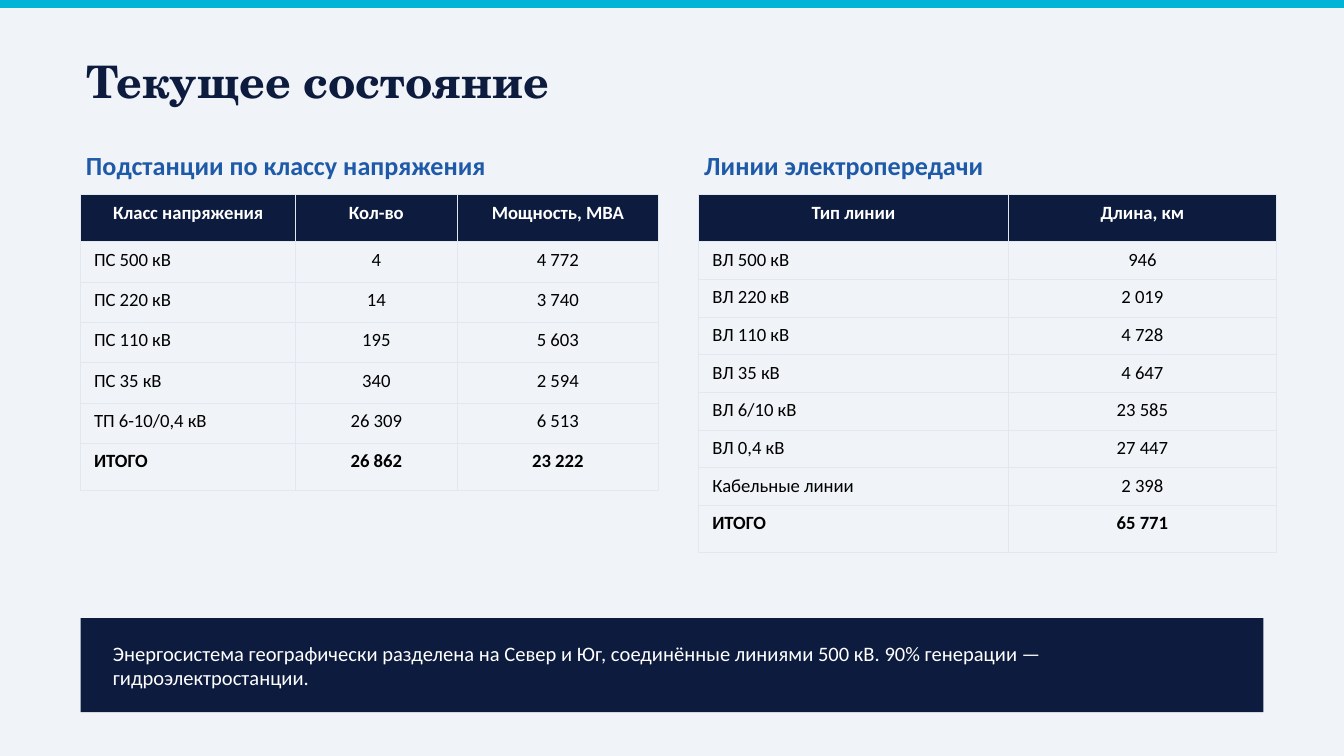
from dataclasses import dataclass

from lxml import etree
from pptx import Presentation
from pptx.dml.color import RGBColor
from pptx.enum.shapes import MSO_SHAPE
from pptx.enum.text import MSO_ANCHOR, MSO_AUTO_SIZE, PP_ALIGN
from pptx.oxml.ns import qn
from pptx.util import Inches, Pt

RECTANGLE = MSO_SHAPE.RECTANGLE
MIDDLE = MSO_ANCHOR.MIDDLE
NO_AUTOFIT = MSO_AUTO_SIZE.NONE
LEFT, CENTER = PP_ALIGN.LEFT, PP_ALIGN.CENTER
TITLE_ONLY = 5


@dataclass(frozen=True)
class Theme:
    page: str = "F0F4F8"
    accent: str = "00B4D8"
    navy: str = "0D1B3E"
    blue: str = "1E5AA8"
    white: str = "FFFFFF"
    black: str = "000000"
    border: str = "E2E8F0"
    title_font: str = "TeX Gyre Schola"
    body_font: str = "Calibri"
    title_size: int = 24
    heading_size: int = 14
    note_size: int = 11
    table_size: int = 10
    border_width: float = 0.5
    inset: float = 0.04


def write_text(frame, text, *, font, size, color, bold=False, align=LEFT):
    para = frame.paragraphs[0]
    para.alignment = align
    span = para.add_run()
    span.text = text
    span.font.name = font
    span.font.size = Pt(size)
    span.font.bold = bold
    span.font.color.rgb = RGBColor.from_string(color)


class SlideBuilder:
    def __init__(self, deck, theme):
        self.theme = theme
        self.page = deck.slides.add_slide(deck.slide_layouts[TITLE_ONLY])
        fill = self.page.background.fill
        fill.solid()
        fill.fore_color.rgb = RGBColor.from_string(theme.page)

    def prepare_frame(self, frame):
        frame.word_wrap = True
        frame.auto_size = NO_AUTOFIT
        frame.vertical_anchor = MIDDLE
        inset = Inches(self.theme.inset)
        frame.margin_left = frame.margin_right = inset
        frame.margin_top = frame.margin_bottom = inset

    def title(self, text, left, top, width, height):
        box = self.page.shapes.title
        box.left, box.top = Inches(left), Inches(top)
        box.width, box.height = Inches(width), Inches(height)
        self.prepare_frame(box.text_frame)
        write_text(box.text_frame, text, font=self.theme.title_font,
                   size=self.theme.title_size, color=self.theme.navy, bold=True)

    def text(self, text, left, top, width, height, **style):
        box = self.page.shapes.add_textbox(
            Inches(left), Inches(top), Inches(width), Inches(height))
        self.prepare_frame(box.text_frame)
        write_text(box.text_frame, text, font=self.theme.body_font, **style)

    def bar(self, left, top, width, height, color):
        box = self.page.shapes.add_shape(
            RECTANGLE, Inches(left), Inches(top), Inches(width), Inches(height))
        box.shadow.inherit = False
        box.fill.solid()
        box.fill.fore_color.rgb = RGBColor.from_string(color)
        box.line.fill.background()

    def cell_borders(self, cell):
        properties = cell._tc.get_or_add_tcPr()
        for side in ("lnL", "lnR", "lnT", "lnB"):
            line = etree.SubElement(properties, qn(f"a:{side}"),
                                    w=str(Pt(self.theme.border_width)))
            fill = etree.SubElement(line, qn("a:solidFill"))
            etree.SubElement(fill, qn("a:srgbClr"), val=self.theme.border)

    def table(self, rows, left, top, column_widths, edge_height, row_height):
        theme = self.theme
        last = len(rows) - 1
        heights = [edge_height, *[row_height] * (last - 1), edge_height]
        table = self.page.shapes.add_table(
            len(rows), len(column_widths), Inches(left), Inches(top),
            Inches(sum(column_widths)), Inches(sum(heights))).table
        table.horz_banding = False
        for column, width in zip(table.columns, column_widths):
            column.width = Inches(width)
        for row_index, values in enumerate(rows):
            table.rows[row_index].height = Inches(heights[row_index])
            header = row_index == 0
            for column_index, value in enumerate(values):
                cell = table.cell(row_index, column_index)
                self.cell_borders(cell)
                if header:
                    cell.fill.solid()
                    cell.fill.fore_color.rgb = RGBColor.from_string(theme.navy)
                else:
                    cell.fill.background()
                write_text(cell.text_frame, value, font=theme.body_font,
                           size=theme.table_size,
                           color=theme.white if header else theme.black,
                           bold=row_index in (0, last),
                           align=CENTER if header or column_index else LEFT)


SUBSTATIONS = [
    ("Класс напряжения", "Кол-во", "Мощность, МВА"),
    ("ПС 500 кВ", "4", "4 772"),
    ("ПС 220 кВ", "14", "3 740"),
    ("ПС 110 кВ", "195", "5 603"),
    ("ПС 35 кВ", "340", "2 594"),
    ("ТП 6-10/0,4 кВ", "26 309", "6 513"),
    ("ИТОГО", "26 862", "23 222"),
]
POWER_LINES = [
    ("Тип линии", "Длина, км"),
    ("ВЛ 500 кВ", "946"),
    ("ВЛ 220 кВ", "2 019"),
    ("ВЛ 110 кВ", "4 728"),
    ("ВЛ 35 кВ", "4 647"),
    ("ВЛ 6/10 кВ", "23 585"),
    ("ВЛ 0,4 кВ", "27 447"),
    ("Кабельные линии", "2 398"),
    ("ИТОГО", "65 771"),
]
SECTIONS = [
    ("Подстанции по классу напряжения", 0.6, SUBSTATIONS, (1.6, 1.2, 1.5), 0.3),
    ("Линии электропередачи", 5.2, POWER_LINES, (2.3, 2), 0.28),
]
NOTE = ("Энергосистема географически разделена на Север и Юг, соединённые "
        "линиями 500 кВ. 90% генерации — гидроэлектростанции.")


def main():
    deck = Presentation()
    deck.slide_width = Inches(10)
    deck.slide_height = deck.slide_width * 9 // 16
    theme = Theme()
    builder = SlideBuilder(deck, theme)
    builder.bar(0, 0, 10, 0.06, theme.accent)
    builder.title("Текущее состояние", 0.6, 0.3, 8.8, 0.6)
    for heading, left, rows, column_widths, row_height in SECTIONS:
        builder.text(heading, left, 1.05, 4.3, 0.35,
                     size=theme.heading_size, color=theme.blue, bold=True)
        builder.table(rows, left, 1.45, column_widths, 0.35, row_height)
    builder.bar(0.6, 4.6, 8.8, 0.7, theme.navy)
    builder.text(NOTE, 0.8, 4.65, 8.4, 0.6,
                 size=theme.note_size, color=theme.white)
    deck.save("out.pptx")


if __name__ == "__main__":
    main()
